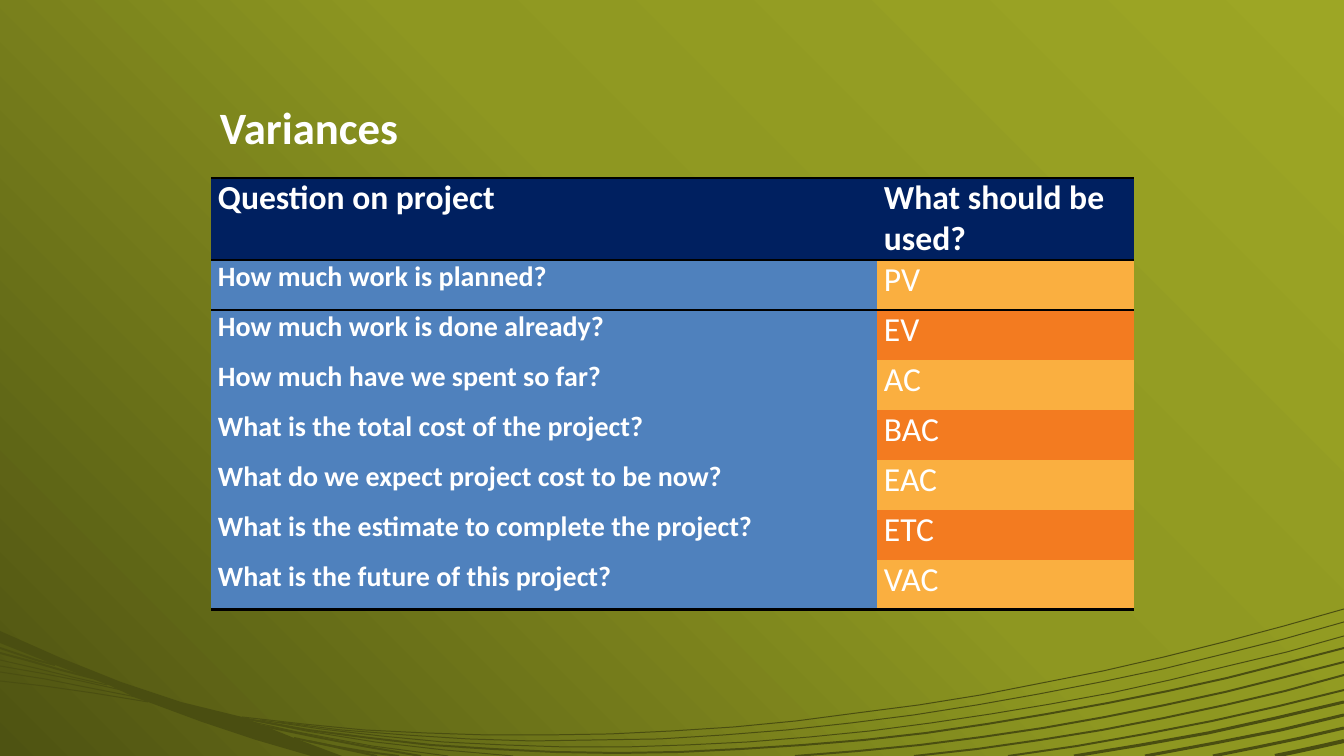
from copy import deepcopy
from lxml.etree import SubElement as Sub
from pptx import Presentation
from pptx.dml.color import RGBColor
from pptx.oxml.ns import qn
from pptx.util import Pt

PX = 914400 / 100.8
WIDE, HIGH = 1344, 756
FONT = "Calibri"
WHITE, BLACK, NAVY, BLUE = "FFFFFF", "000000", "002060", "4F81BD"
AMBER, ORANGE, OLIVE = "FAAF40", "F37B20", "4A4E11"
STOPS = [(0, "9DA625"), (0.45, "8E9721"), (1, "4E5312")]

TITLE = "Variances"
ROWS = [
    ("Question on project", "What should be used?"),
    ("How much work is planned?", "PV"),
    ("How much work is done already?", "EV"),
    ("How much have we spent so far?", "AC"),
    ("What is the total cost of the project?", "BAC"),
    ("What do we expect project cost to be now?", "EAC"),
    ("What is the estimate to complete the project?", "ETC"),
    ("What is the future of this project?", "VAC"),
]
COLS = (666, 257)
HEAD, ROW = 82, 50

# Blade: upper curve, corners, lower curve, corners
UPPER = [(0, 631), (81, 669), (161, 701), (242, 717)]
TIP = [(294, 738), (342, 756)]
LOWER = [(311, 756), (255, 741), (202, 723), (148, 702)]
TAIL = [(136, 698), (111, 686), (55, 665), (0, 643)]

# Strands by thickness: four curve points each
STRANDS = {
    1: [
        [(242, 717), (605, 766), (988, 714), (1344, 609)],
        [(278, 722), (636, 771), (1007, 719), (1344, 622)],
        [(260, 720), (623, 781), (1001, 733), (1344, 636)],
        [(238, 717), (329, 737), (421, 750), (513, 756)],
        [(221, 715), (297, 734), (372, 747), (448, 756)],
        [(0, 681), (41, 685), (90, 692), (148, 702)],
        [(0, 672), (44, 679), (90, 687), (136, 697)],
        [(0, 666), (40, 673), (81, 681), (121, 690)],
        [(0, 660), (31, 667), (76, 677), (107, 685)],
    ],
    2: [
        [(247, 719), (613, 789), (997, 743), (1344, 648)],
        [(795, 756), (983, 744), (1168, 710), (1344, 662)],
        [(914, 756), (1062, 741), (1207, 713), (1344, 675)],
        [(1008, 756), (1124, 741), (1236, 718), (1344, 690)],
        [(263, 726), (316, 738), (368, 748), (421, 756)],
        [(308, 741), (338, 747), (368, 752), (399, 756)],
        [(294, 738), (322, 744), (349, 750), (377, 756)],
        [(0, 653), (30, 661), (61, 670), (92, 678)],
        [(0, 648), (18, 654), (36, 660), (55, 665)],
    ],
    3: [
        [(1074, 756), (1162, 743), (1253, 725), (1344, 702)],
        [(1145, 756), (1216, 744), (1283, 730), (1344, 715)],
        [(1213, 756), (1258, 748), (1302, 738), (1344, 728)],
    ],
    4: [[(1275, 756), (1299, 751), (1322, 746), (1344, 741)]],
}


def px(n):
    return round(n * PX)


def rgb(code):
    return RGBColor.from_string(code)


def curve(a, b, c, d):
    """Points along a cubic Bézier curve, one about every 60 px."""
    steps = max(3, abs(d[0] - a[0]) // 60)

    def at(t, i):
        u = 1 - t
        return u**3 * a[i] + 3 * u * u * t * b[i] + 3 * u * t * t * c[i] + t**3 * d[i]
    return [(at(k / steps, 0), at(k / steps, 1)) for k in range(steps + 1)]


def outline(parts, close):
    pen = slide.shapes.build_freeform(*parts[0][0], scale=PX)
    for i, part in enumerate(parts):
        if i:
            pen.move_to(*part[0])
        pen.add_line_segments(part[1:], close=close)
    shape = pen.convert_to_shape()
    shape.shadow.inherit = False
    return shape


def write(frame, text, size, bold):
    run = frame.paragraphs[0].add_run()
    run.text = text
    look = {"name": FONT, "size": Pt(size), "bold": bold}
    for key, val in look.items():
        setattr(run.font, key, val)
    run.font.color.rgb = rgb(WHITE)


def border(cell, sides):
    """Put black lines on a cell; sides maps a tag to a width in points."""
    props = cell._tc.get_or_add_tcPr()
    for i, (tag, width) in enumerate(sides.items()):
        line = Sub(props, qn(tag), w=str(Pt(width)))
        fill = Sub(line, qn("a:solidFill"))
        Sub(fill, qn("a:srgbClr"), val=BLACK)
        props.insert(i, line)


prs = Presentation()
prs.slide_width, prs.slide_height = px(WIDE), px(HIGH)
slide = prs.slides.add_slide(prs.slide_layouts[6])

back = slide.background.fill
back.gradient()
back.gradient_angle = 225
end = list(slide.element.iter(qn("a:gs")))[-1]
end.addprevious(deepcopy(end))
for stop, (place, code) in zip(back.gradient_stops, STOPS):
    stop.position = place
    stop.color.rgb = rgb(code)

blade = outline([curve(*UPPER) + TIP + curve(*LOWER) + TAIL], True)
blade.fill.solid()
blade.fill.fore_color.rgb = rgb(OLIVE)
blade.line.fill.background()
for thick, group in STRANDS.items():
    wave = outline([curve(*points) for points in group], False)
    wave.fill.background()
    wave.line.color.rgb = rgb(OLIVE)
    wave.line.width = px(thick)

box = slide.shapes.add_textbox(px(210), px(101), px(432), px(37))
box.text_frame.word_wrap = True
box.text_frame.paragraphs[0].line_spacing = 0.9
write(box.text_frame, TITLE, 32, True)

last = len(ROWS) - 1
table = slide.shapes.add_table(len(ROWS), len(COLS), px(211), px(178),
                               px(sum(COLS)), px(HEAD + ROW * last)).table
table._tbl.tblPr.find(qn("a:tableStyleId")).text = "{2D5ABB26-0587-4C30-8999-92F81FD0307C}"
table.horz_banding = False
for col, width in zip(table.columns, COLS):
    col.width = px(width)
EDGES = {0: {"a:lnT": 1, "a:lnB": 1}, 1: {"a:lnT": 1}, last: {"a:lnB": 2.25}}
for r, texts in enumerate(ROWS):
    table.rows[r].height = px(ROW if r else HEAD)
    for c, text in enumerate(texts):
        cell = table.cell(r, c)
        pads = {"left": 7, "right": 7, "top": 0, "bottom": 0}
        for side, pad in pads.items():
            setattr(cell, "margin_" + side, px(pad))
        answer = r > 0 and c == 1
        body = (AMBER if r % 2 else ORANGE) if answer else BLUE
        cell.fill.solid()
        cell.fill.fore_color.rgb = rgb(body if r else NAVY)
        border(cell, EDGES.get(r, {}))
        write(cell.text_frame, text, 20 if r and c == 0 else 24, not answer)

prs.save("out.pptx")
